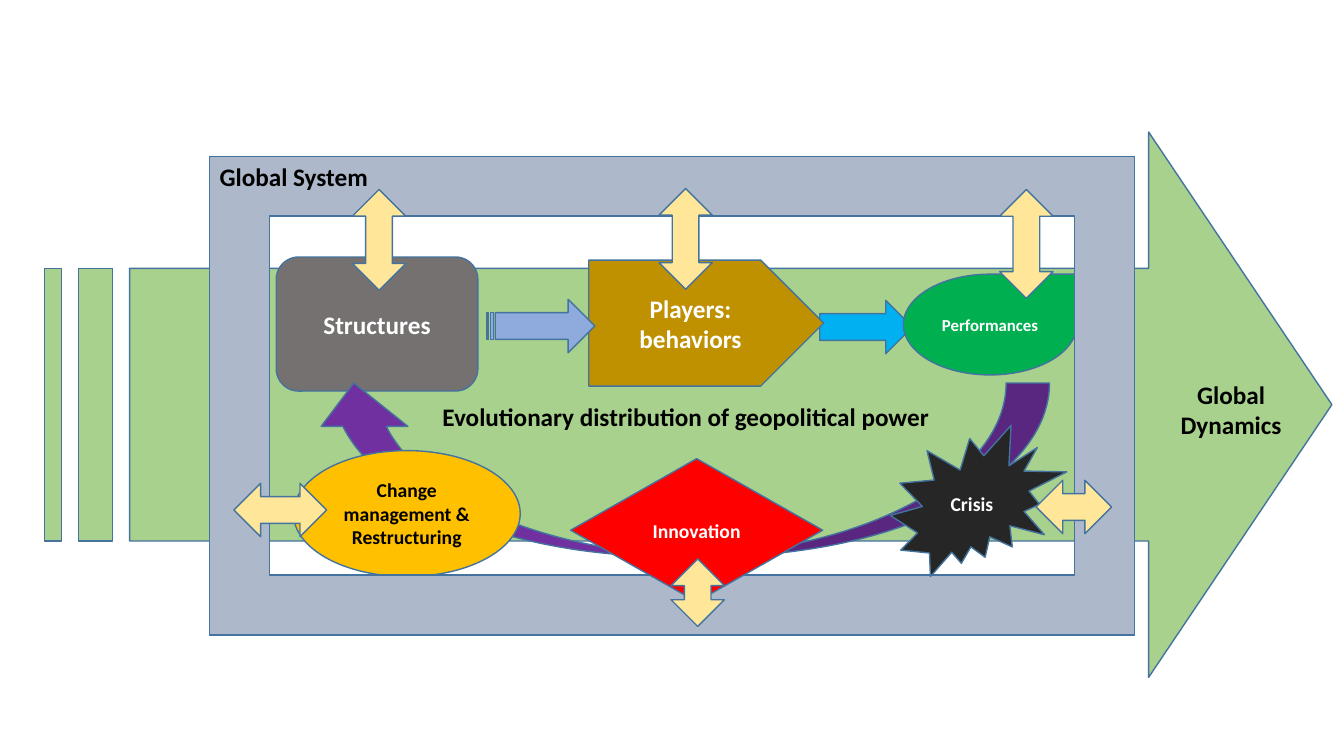
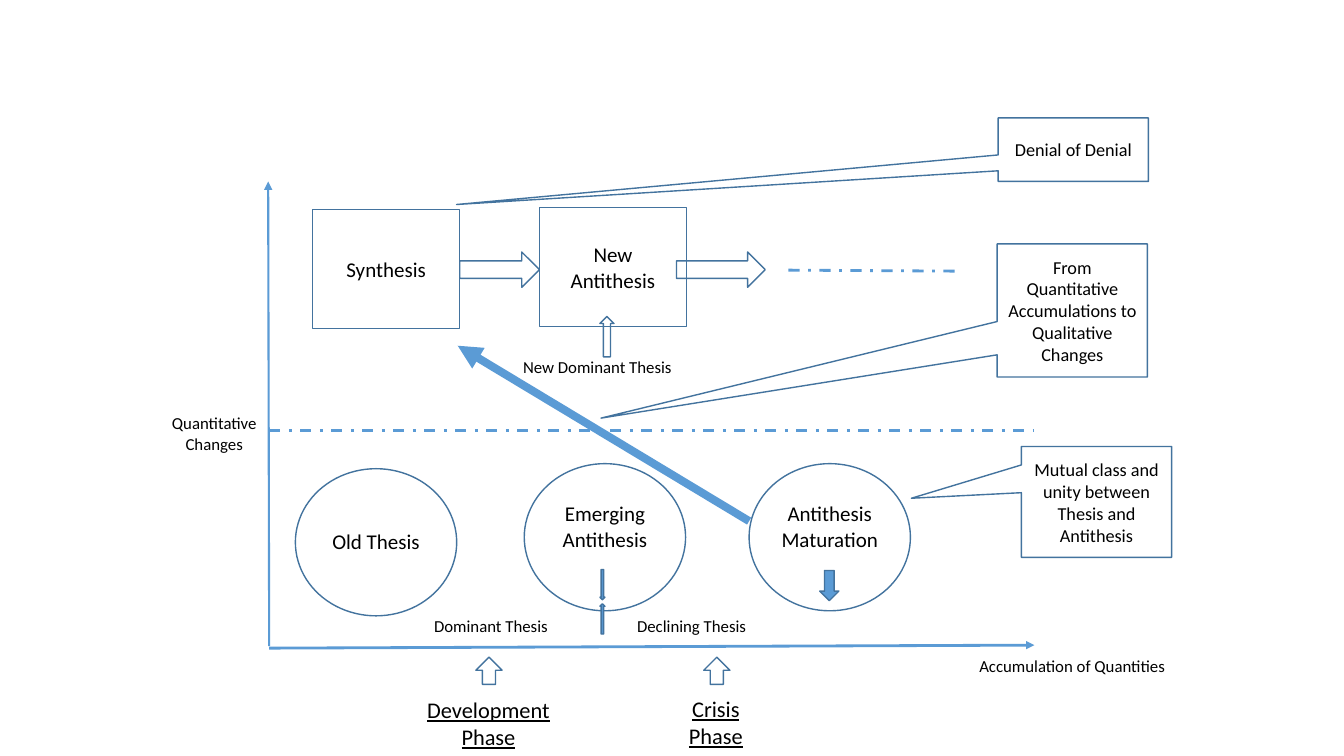
from lxml.etree import SubElement
from pptx import Presentation
from pptx.dml.color import RGBColor
from pptx.enum.dml import MSO_LINE
from pptx.enum.shapes import MSO_CONNECTOR, MSO_SHAPE
from pptx.enum.text import MSO_ANCHOR, PP_ALIGN
from pptx.oxml.ns import qn
from pptx.util import Inches, Pt

# Shared style
FONT = "Calibri"
BLACK = RGBColor(0x00, 0x00, 0x00)
WHITE = RGBColor(0xFF, 0xFF, 0xFF)
OUTLINE = RGBColor(0x43, 0x73, 0x9E)
BLUE = RGBColor(0x5B, 0x9B, 0xD5)
SKY = RGBColor(0x00, 0xB0, 0xF0)
PERIWINKLE = RGBColor(0x8F, 0xAA, 0xDC)
LIGHT_GREEN = RGBColor(0xA9, 0xD1, 0x8E)
GREEN = RGBColor(0x00, 0xB0, 0x50)
GRAY = RGBColor(0x76, 0x71, 0x71)
STEEL = RGBColor(0xAD, 0xB9, 0xCA)
CHARCOAL = RGBColor(0x26, 0x26, 0x26)
PURPLE = RGBColor(0x70, 0x30, 0xA0)
AMBER = RGBColor(0xFF, 0xC0, 0x00)
CREAM = RGBColor(0xFF, 0xE6, 0x99)
OCHRE = RGBColor(0xBF, 0x90, 0x00)
RED = RGBColor(0xFF, 0x00, 0x00)

# Slide 1, from back to front: preset, box, fill, text, size, text colour
BACKDROP = [
    (MSO_SHAPE.STRIPED_RIGHT_ARROW, (0.44, 1.31, 12.77, 5.41), LIGHT_GREEN),
    (MSO_SHAPE.ROUNDED_RECTANGLE, (2.74, 2.55, 2, 1.33), GRAY, "Structures", 18, WHITE),
    (MSO_SHAPE.RIGHT_ARROW, (8.13, 2.98, 0.92, 0.53), SKY),
    (MSO_SHAPE.TEAR, (8.96, 2.72, 1.72, 1), GREEN, "Performances", 12, WHITE),
    (MSO_SHAPE.CURVED_UP_ARROW, (3.08, 3.8, 7.33, 1.72), PURPLE),
    (MSO_SHAPE.OVAL, (2.91, 4.47, 2.25, 1.25), AMBER,
     "Change management & Restructuring", 14, BLACK),
    (MSO_SHAPE.FRAME, (2.08, 1.55, 9.17, 4.75), STEEL),
]
FOREGROUND = [
    (MSO_SHAPE.EXPLOSION2, (8.83, 4.22, 1.75, 1.5), CHARCOAL, "Crisis", 14, WHITE),
    (MSO_SHAPE.DIAMOND, (5.66, 4.55, 2.5, 1.42), RED, "Innovation", 14, WHITE),
    (MSO_SHAPE.PENTAGON, (5.84, 2.58, 2.33, 1.25), OCHRE, "Players: behaviors", 18, WHITE),
    (MSO_SHAPE.STRIPED_RIGHT_ARROW, (4.83, 2.97, 1.07, 0.53), PERIWINKLE),
]
# Two-way arrows: centre x, centre y, length
EXCHANGE_THICKNESS = 0.53
VERTICAL_EXCHANGES = [(3.76, 2.38, 1), (6.8, 2.37, 1), (10.18, 2.42, 1.08), (6.92, 5.88, 0.67)]
HORIZONTAL_EXCHANGES = [(2.78, 5.06, 0.92), (10.65, 5.03, 0.75)]
# Labels: text, box, alignment, wrap
SYSTEM_LABELS = [
    ("Global System", (2.08, 1.55, 2.5, 0.71), PP_ALIGN.LEFT, True),
    ("Global Dynamics", (11.47, 3.71, 1.48, 0.71), PP_ALIGN.CENTER, True),
    ("Evolutionary distribution of geopolitical power", (4.29, 3.93, 5.07, 0.4),
     PP_ALIGN.LEFT, False),
]

# Slide 2
AXIS_LEFT, AXIS_RIGHT = 2.67, 10.26
# Lines: from, to, width, dashed, arrowhead
LINES = [
    ((AXIS_LEFT, 6.41), (2.66, 1.8), 1.5, False, True),
    ((AXIS_LEFT, 6.43), (AXIS_RIGHT, 6.4), 2, False, True),
    ((AXIS_LEFT, 4.27), (AXIS_RIGHT, 4.27), 2, True, False),
    ((7.82, 2.68), (9.48, 2.69), 2, True, False),
    ((7.43, 5.17), (4.54, 3.43), 5.75, False, True),
]
BOX_SIZE = (1.46, 1.18)
BOXES = [("Synthesis", 3.1, 2.08), ("New Antithesis", 5.35, 2.06)]
CIRCLE_SIZE = (1.6, 1.46)
# Circles: text, left, top, distance from circle top to text
CIRCLES = [
    ("Old Thesis", 2.93, 4.65, 0.54),
    ("Emerging\nAntithesis", 5.2, 4.6, 0.32),
    ("Antithesis\nMaturation", 7.43, 4.6, 0.32),
]
# Block arrows: preset, box, fill
BLOCK_ARROWS = [
    (MSO_SHAPE.RIGHT_ARROW, (4.56, 2.5, 0.79, 0.35), None),
    (MSO_SHAPE.RIGHT_ARROW, (6.71, 2.5, 0.88, 0.35), None),
    (MSO_SHAPE.UP_ARROW, (5.95, 3.14, 0.14, 0.4), None),
    (MSO_SHAPE.UP_ARROW, (4.72, 6.52, 0.26, 0.27), None),
    (MSO_SHAPE.UP_ARROW, (6.98, 6.52, 0.26, 0.27), None),
    (MSO_SHAPE.DOWN_ARROW, (5.95, 5.65, 0.05, 0.3), BLUE),
    (MSO_SHAPE.UP_ARROW, (5.95, 5.99, 0.05, 0.3), BLUE),
    (MSO_SHAPE.DOWN_ARROW, (8.13, 5.66, 0.19, 0.3), BLUE),
]
NOTES = [
    ("Quantitative\nChanges", (1.6, 4.05, 1.05, 0.5)),
    ("New Dominant Thesis", (5.08, 3.49, 1.69, 0.3)),
    ("Accumulation of Quantities", (9.6, 6.46, 2.07, 0.3)),
    ("Dominant Thesis", (4.2, 6.06, 1.34, 0.3)),
    ("Declining Thesis", (6.21, 6.06, 1.3, 0.3)),
]
PHASES = [
    ("Development\nPhase", (4.13, 6.86, 1.43, 0.64)),
    ("Crisis\nPhase", (6.73, 6.85, 0.74, 0.64)),
]
# Callouts: text, box, pointer offset as shares of the box
CALLOUTS = [
    ("Denial of Denial", (9.9, 1.17, 1.49, 0.63), (-4.105, 0.864)),
    ("From Quantitative Accumulations to Qualitative Changes",
     (9.89, 2.42, 1.49, 1.32), (-3.137, 0.809)),
    ("Mutual class and unity between\nThesis and Antithesis",
     (10.13, 4.43, 1.49, 1.1), (-1.232, -0.033)),
]


def write_text(shape, text, size, color=BLACK, align=PP_ALIGN.CENTER, wrap=True,
               bold=False, underline=False):
    frame = shape.text_frame
    frame.text = text
    frame.word_wrap = wrap
    for paragraph in frame.paragraphs:
        paragraph.alignment = align
        font = paragraph.font
        font.name, font.size, font.bold = FONT, Pt(size), bold
        font.underline = underline
        font.color.rgb = color


def add_label(slide, text, box, size, **style):
    label = slide.shapes.add_textbox(*map(Inches, box))
    write_text(label, text, size, **style)


def add_block(slide, preset, box, fill=None, text="", size=15, color=BLACK, bold=False):
    shape = slide.shapes.add_shape(preset, *map(Inches, box))
    shape.shadow.inherit = False
    if fill is None:
        shape.fill.background()
    else:
        shape.fill.solid()
        shape.fill.fore_color.rgb = fill
    shape.line.color.rgb = OUTLINE
    shape.line.width = Pt(1)
    if text:
        write_text(shape, text, size, color, bold=bold)
        shape.text_frame.vertical_anchor = MSO_ANCHOR.MIDDLE
    return shape


def add_line(slide, start, end, width, dashed, arrowhead):
    connector = slide.shapes.add_connector(
        MSO_CONNECTOR.STRAIGHT, *map(Inches, start + end))
    connector.line.color.rgb = BLUE
    connector.line.width = Pt(width)
    if dashed:
        connector.line.dash_style = MSO_LINE.DASH_DOT
    properties = connector.element.spPr
    if arrowhead:
        SubElement(properties.find(qn("a:ln")), qn("a:tailEnd"), type="triangle")
    SubElement(properties, qn("a:effectLst"))


def add_exchange(slide, preset, center_x, center_y, width, height):
    box = (center_x - width / 2, center_y - height / 2, width, height)
    add_block(slide, preset, box, CREAM)


def build_system_slide(slide):
    backdrop = [add_block(slide, *item, bold=True) for item in BACKDROP]
    backdrop[0].adjustments[1] = 0.336
    # The feedback arrow runs from right to left
    backdrop[4].element.spPr.find(qn("a:xfrm")).set("flipH", "1")
    for item in FOREGROUND:
        add_block(slide, *item, bold=True)
    for x, y, length in VERTICAL_EXCHANGES:
        add_exchange(slide, MSO_SHAPE.UP_DOWN_ARROW, x, y, EXCHANGE_THICKNESS, length)
    for x, y, length in HORIZONTAL_EXCHANGES:
        add_exchange(slide, MSO_SHAPE.LEFT_RIGHT_ARROW, x, y, length, EXCHANGE_THICKNESS)
    for text, box, align, wrap in SYSTEM_LABELS:
        add_label(slide, text, box, 18, align=align, wrap=wrap, bold=True)


def build_dialectic_slide(slide):
    for text, left, top in BOXES:
        add_block(slide, MSO_SHAPE.RECTANGLE, (left, top, *BOX_SIZE), text=text)
    for text, left, top, drop in CIRCLES:
        add_block(slide, MSO_SHAPE.OVAL, (left, top, *CIRCLE_SIZE))
        add_label(slide, text, (left, top + drop, CIRCLE_SIZE[0], 0.35), 15)
    for item in LINES:
        add_line(slide, *item)
    for item in BLOCK_ARROWS:
        add_block(slide, *item)
    for text, box in NOTES:
        add_label(slide, text, box, 12, wrap=False)
    for text, box in PHASES:
        add_label(slide, text, box, 16, wrap=False, underline=True)
    for text, box, pointer in CALLOUTS:
        callout = add_block(slide, MSO_SHAPE.RECTANGULAR_CALLOUT, box, text=text, size=13)
        callout.adjustments[0], callout.adjustments[1] = pointer


def main():
    presentation = Presentation()
    presentation.slide_width = Inches(13.33)
    presentation.slide_height = Inches(7.5)
    blank_layout = presentation.slide_layouts[6]
    for build in (build_system_slide, build_dialectic_slide):
        build(presentation.slides.add_slide(blank_layout))
    presentation.save("out.pptx")


if __name__ == "__main__":
    main()
